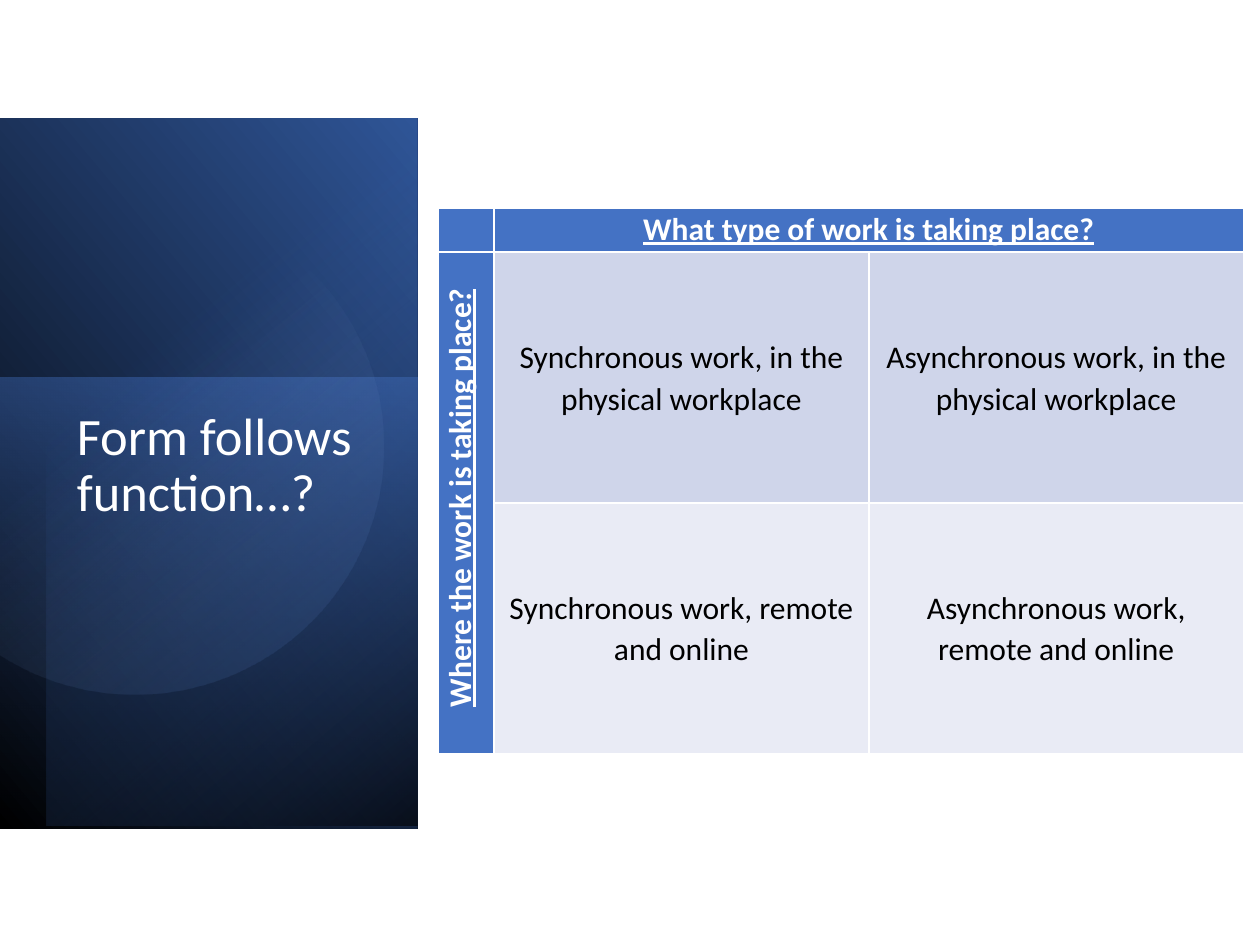
from math import acos, cos, sin
from pptx import Presentation
from pptx.dml.color import RGBColor
from pptx.enum.shapes import MSO_SHAPE
from pptx.enum.text import MSO_ANCHOR, MSO_AUTO_SIZE, PP_ALIGN
from pptx.oxml.ns import qn
from pptx.oxml.xmlchemy import OxmlElement
from pptx.util import Cm, Pt

RECT = MSO_SHAPE.RECTANGLE
TOP, MID = MSO_ANCHOR.TOP, MSO_ANCHOR.MIDDLE
LEFT, CENTER = PP_ALIGN.LEFT, PP_ALIGN.CENTER
FIXED = MSO_AUTO_SIZE.NONE

HUES = {"white": "FFFFFF", "black": "000000", "blue": "4472C4", "deep": "2F5597",
        "navy": "203864", "sky": "8FAADC", "band": "CFD5EA", "pale": "E9EBF5"}
HEAD = {"size": Pt(18), "name": "Calibri", "bold": True, "underline": True}
BODY = {"size": Pt(18), "name": "Calibri", "bold": False, "underline": False}
TITLE = {"size": Pt(30), "name": "Calibri", "bold": False}
PARA = {"alignment": CENTER, "line_spacing": 1.07, "space_after": Pt(8)}
INSET = {"margin_left": Cm(0.3), "margin_right": Cm(0.3), "margin_top": 0, "margin_bottom": 0}


def rgb(hue):
    """Return the colour of a named hue."""
    return RGBColor.from_string(HUES[hue])


def put(item, form):
    """Set attributes of an item from a dict."""
    for key, value in form.items():
        setattr(item, key, value)


def shade(shape, stops, angle):
    """Fill a shape with a two-stop gradient of position, hue and opacity."""
    shape.shadow.inherit = False
    shape.line.fill.background()
    shape.fill.gradient()
    shape.fill.gradient_angle = 360 - angle
    marks = shape._element.spPr.iter(qn("a:gs"))
    for stop, mark, (place, hue, alpha) in zip(shape.fill.gradient_stops, marks, stops):
        stop.position = place / 100
        stop.color.rgb = rgb(hue)
        if alpha < 100:
            clear = OxmlElement("a:alpha")
            clear.set("val", str(alpha * 1000))
            mark[0].append(clear)


def turned(slide, box, turn, flip):
    """Add a quarter-turned rectangle that covers the box."""
    x, y, w, h = box
    shape = slide.shapes.add_shape(
        RECT, Cm(x + (w - h) / 2), Cm(y + (h - w) / 2), Cm(h), Cm(w))
    shape.rotation = turn
    if flip:
        shape._element.spPr.xfrm.set("flipH", "1")
    return shape


def disc(slide, x, y, radius, edge):
    """Add a circle cut off along a vertical edge."""
    end = acos((edge - x) / radius)
    count = 120
    turns = [end * (2 * i / count - 1) for i in range(count + 1)]
    dots = [(Cm(x + radius * cos(t)), Cm(y + radius * sin(t))) for t in turns]
    pen = slide.shapes.build_freeform(*dots[0])
    pen.add_line_segments(dots[1:], close=True)
    return pen.convert_to_shape()


def panel(slide, box, text):
    """Draw the shaded side panel with the title on it."""
    x, y, w, h = box
    shade(turned(slide, box, 90, True), [(0, "black", 100), (100, "deep", 100)], 310)
    shade(turned(slide, (x, y + 5.22, w, 9.07), 270, False),
          [(0, "blue", 50), (100, "navy", 0)], 190)
    shade(turned(slide, (x + 0.94, y, w - 0.94, h - 0.06), 270, True),
          [(0, "black", 59), (69, "blue", 0)], 220)
    shade(disc(slide, x + 2.72, y + 6.62, 5, x), [(39, "sky", 0), (100, "deep", 26)], 51.6)

    title = slide.shapes.title
    put(title, {"left": Cm(x + 1.37), "top": Cm(y + 5.78), "width": Cm(6), "height": Cm(6.4)})
    frame = title.text_frame
    frame.text = text
    put(frame, {"word_wrap": True, "auto_size": FIXED, "vertical_anchor": TOP,
                "margin_left": Cm(0.18), "margin_right": Cm(0.18),
                "margin_top": Cm(0.1), "margin_bottom": Cm(0.1)})
    para = frame.paragraphs[0]
    put(para, {"alignment": LEFT, "line_spacing": 0.9})
    put(para.runs[0].font, TITLE)
    para.runs[0].font.color.rgb = rgb("white")
    slide.shapes._spTree.append(title._element)


def matrix(slide, box, rows):
    """Draw the table of work types by place."""
    x, y, w, h = box
    side, top = 1.12, 0.89
    table = slide.shapes.add_table(3, 3, Cm(x), Cm(y), Cm(w), Cm(h)).table
    for i in range(3):
        table.columns[i].width = Cm((w - side) / 2 if i else side)
        table.rows[i].height = Cm((h - top) / 2 if i else top)
    for r, row in enumerate(rows):
        for c, text in enumerate(row):
            cell = table.cell(r, c)
            head = r == 0 or c == 0
            put(cell, {**INSET, "text": text, "vertical_anchor": TOP if head else MID})
            cell.fill.solid()
            cell.fill.fore_color.rgb = rgb("blue" if head else ("band", "pale")[r - 1])
            para = cell.text_frame.paragraphs[0]
            put(para, PARA)
            for font in [para.font] + [run.font for run in para.runs]:
                put(font, HEAD if head else BODY)
                font.color.rgb = rgb("white" if head else "black")
    table.cell(0, 1).merge(table.cell(0, 2))
    tall = table.cell(1, 0)
    tall.merge(table.cell(2, 0))
    tall._tc.get_or_add_tcPr().set("vert", "vert270")
    tall.text_frame.paragraphs[0]._p.get_or_add_pPr().set("marL", str(Cm(0.2)))


def main():
    """Build the slide and save it."""
    deck = Presentation()
    put(deck, {"slide_width": Cm(25.4), "slide_height": Cm(19.05)})
    slide = deck.slides.add_slide(deck.slide_layouts[5])
    panel(slide, (0, 2.38, 8.41, 14.33), "Form follows function…?")
    matrix(slide, (8.84, 4.19, 16.23, 11), [
        ["", "What type of work is taking place?", ""],
        ["Where the work is taking place?", "Synchronous work, in the physical workplace",
         "Asynchronous work, in the physical workplace"],
        ["", "Synchronous work, remote and online", "Asynchronous work, remote and online"]])
    deck.save("out.pptx")


if __name__ == "__main__":
    main()
